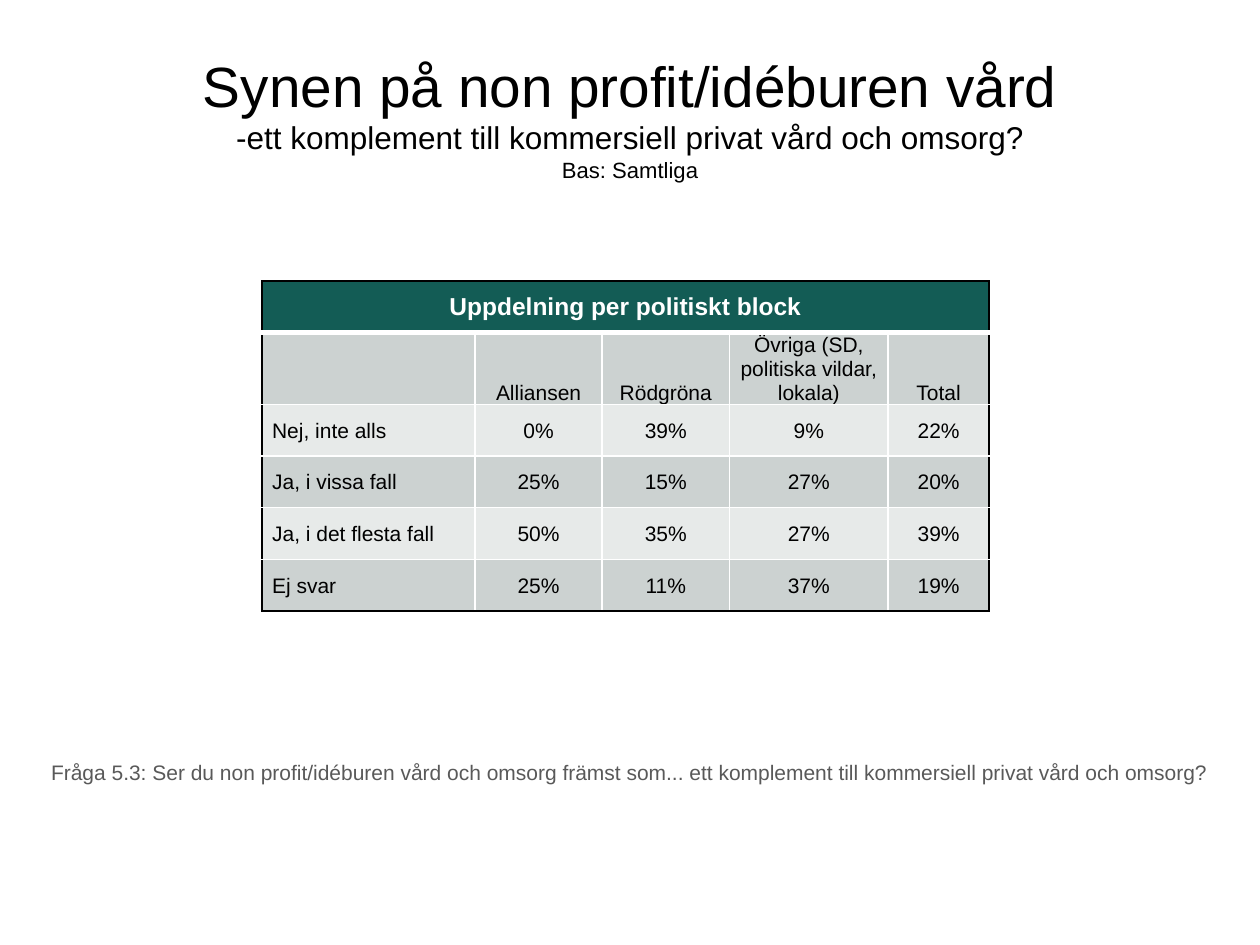
from copy import deepcopy

from lxml import etree
from pptx import Presentation
from pptx.dml.color import RGBColor
from pptx.enum.text import MSO_ANCHOR, MSO_AUTO_SIZE, PP_ALIGN
from pptx.oxml.ns import qn
from pptx.util import Inches, Pt

CENTER, LEFT = PP_ALIGN.CENTER, PP_ALIGN.LEFT
MIDDLE, BOTTOM = MSO_ANCHOR.MIDDLE, MSO_ANCHOR.BOTTOM
NO_AUTOFIT, GROW = MSO_AUTO_SIZE.NONE, MSO_AUTO_SIZE.SHAPE_TO_FIT_TEXT

BLACK = RGBColor(0x00, 0x00, 0x00)
WHITE = RGBColor(0xFF, 0xFF, 0xFF)
GREEN = RGBColor(0x13, 0x5C, 0x55)
DARK_BAND = RGBColor(0xCC, 0xD2, 0xD1)
LIGHT_BAND = RGBColor(0xE7, 0xEA, 0xE9)
GREY = RGBColor(0x59, 0x59, 0x59)
FONT = "Arial"

SLIDE_WIDTH, SLIDE_HEIGHT = Inches(10), Inches(7.5)
TITLE_LINES = [
    ("Synen på non profit/idéburen vård", 32.4),
    ("-ett komplement till kommersiell privat vård och omsorg?", 18),
    ("Bas: Samtliga", 12.6),
]
QUESTION = ("Fråga 5.3: Ser du non profit/idéburen vård och omsorg främst som... "
            "ett komplement till kommersiell privat vård och omsorg?")
TABLE_HEADING = "Uppdelning per politiskt block"
TABLE_ROWS = [
    ["", "Alliansen", "Rödgröna", "Övriga (SD, politiska vildar, lokala)", "Total"],
    ["Nej, inte alls", "0%", "39%", "9%", "22%"],
    ["Ja, i vissa fall", "25%", "15%", "27%", "20%"],
    ["Ja, i det flesta fall", "50%", "35%", "27%", "39%"],
    ["Ej svar", "25%", "11%", "37%", "19%"],
]
COLUMN_WIDTHS = [1.69, 1.01, 1.01, 1.26, 0.8]
ROW_HEIGHT = 0.41


def add_run(paragraph, text, size, color, bold=False):
    run = paragraph.add_run()
    run.text = text
    run.font.name = FONT
    run.font.size = Pt(size)
    run.font.bold = bold
    run.font.color.rgb = color
    return run


def place_title(title, left, top, width, height):
    title.left, title.top, title.width, title.height = left, top, width, height
    frame = title.text_frame
    frame.auto_size = NO_AUTOFIT
    frame.word_wrap = True
    frame.vertical_anchor = MIDDLE
    paragraph = frame.paragraphs[0]
    paragraph.alignment = CENTER
    for index, (text, size) in enumerate(TITLE_LINES):
        run = add_run(paragraph, text, size, BLACK)
        if index < len(TITLE_LINES) - 1:
            # The break takes the size of its own line
            line_break = paragraph._p.add_br()
            line_break.append(deepcopy(run._r.rPr))


def add_question(slide, left, top, width, height):
    box = slide.shapes.add_textbox(left, top, width, height)
    frame = box.text_frame
    frame.word_wrap = True
    frame.auto_size = GROW
    paragraph = frame.paragraphs[0]
    paragraph.alignment = CENTER
    add_run(paragraph, QUESTION, 12, GREY)


def set_borders(cell, **edges):
    """Draw edges given as tag=(colour, points), in the order lnL, lnR, lnT, lnB."""
    properties = cell._tc.get_or_add_tcPr()
    for position, (tag, (color, points)) in enumerate(edges.items()):
        line = etree.Element(qn(f"a:{tag}"), w=str(Pt(points)))
        fill = etree.SubElement(line, qn("a:solidFill"))
        etree.SubElement(fill, qn("a:srgbClr"), val=str(color))
        properties.insert(position, line)


def fill_cell(cell, color):
    cell.fill.solid()
    cell.fill.fore_color.rgb = color


def format_heading(table):
    last_column = len(COLUMN_WIDTHS) - 1
    heading = table.cell(0, 0)
    heading.merge(table.cell(0, last_column))
    heading.vertical_anchor = MIDDLE
    paragraph = heading.text_frame.paragraphs[0]
    paragraph.alignment = CENTER
    add_run(paragraph, TABLE_HEADING, 14, WHITE, bold=True)
    for column in range(last_column + 1):
        cell = table.cell(0, column)
        fill_cell(cell, GREEN)
        set_borders(cell, lnL=(BLACK, 1), lnR=(BLACK, 1),
                    lnT=(BLACK, 1), lnB=(WHITE, 3))


def format_body_cell(cell, text, row, column):
    """Format one cell, with row 1 as the row of column names."""
    is_label = column == 0 and row > 1
    is_last_column = column == len(COLUMN_WIDTHS) - 1
    is_last_row = row == len(TABLE_ROWS)
    cell.margin_left = Inches(0.08 if is_label else 0.01)
    cell.margin_right = cell.margin_top = Inches(0.01)
    cell.margin_bottom = 0
    cell.vertical_anchor = BOTTOM if row == 1 else MIDDLE
    fill_cell(cell, DARK_BAND if row % 2 else LIGHT_BAND)
    set_borders(cell,
                lnL=(BLACK if column == 0 else WHITE, 1),
                lnR=(BLACK if is_last_column else WHITE, 1),
                lnT=(WHITE, 3 if row == 1 else 1),
                lnB=(BLACK if is_last_row else WHITE, 1))
    paragraph = cell.text_frame.paragraphs[0]
    paragraph.alignment = LEFT if is_label else CENTER
    if text:
        add_run(paragraph, text, 12, BLACK)


def add_block_table(slide, left, top):
    row_count = len(TABLE_ROWS) + 1
    table = slide.shapes.add_table(
        row_count, len(COLUMN_WIDTHS), left, top,
        Inches(sum(COLUMN_WIDTHS)), Inches(ROW_HEIGHT * row_count)).table
    for column, width in zip(table.columns, COLUMN_WIDTHS):
        column.width = Inches(width)
    for row in table.rows:
        row.height = Inches(ROW_HEIGHT)
    format_heading(table)
    for row, texts in enumerate(TABLE_ROWS, start=1):
        for column, text in enumerate(texts):
            format_body_cell(table.cell(row, column), text, row, column)


def main():
    presentation = Presentation()
    presentation.slide_width = SLIDE_WIDTH
    presentation.slide_height = SLIDE_HEIGHT
    slide = presentation.slides.add_slide(presentation.slide_layouts[5])
    place_title(slide.shapes.title, 0, Inches(0.3), SLIDE_WIDTH, Inches(1.25))
    add_block_table(slide, Inches(2.08), Inches(2.23))
    add_question(slide, 0, Inches(5.98), SLIDE_WIDTH, Inches(0.3))
    presentation.save("out.pptx")


if __name__ == "__main__":
    main()
